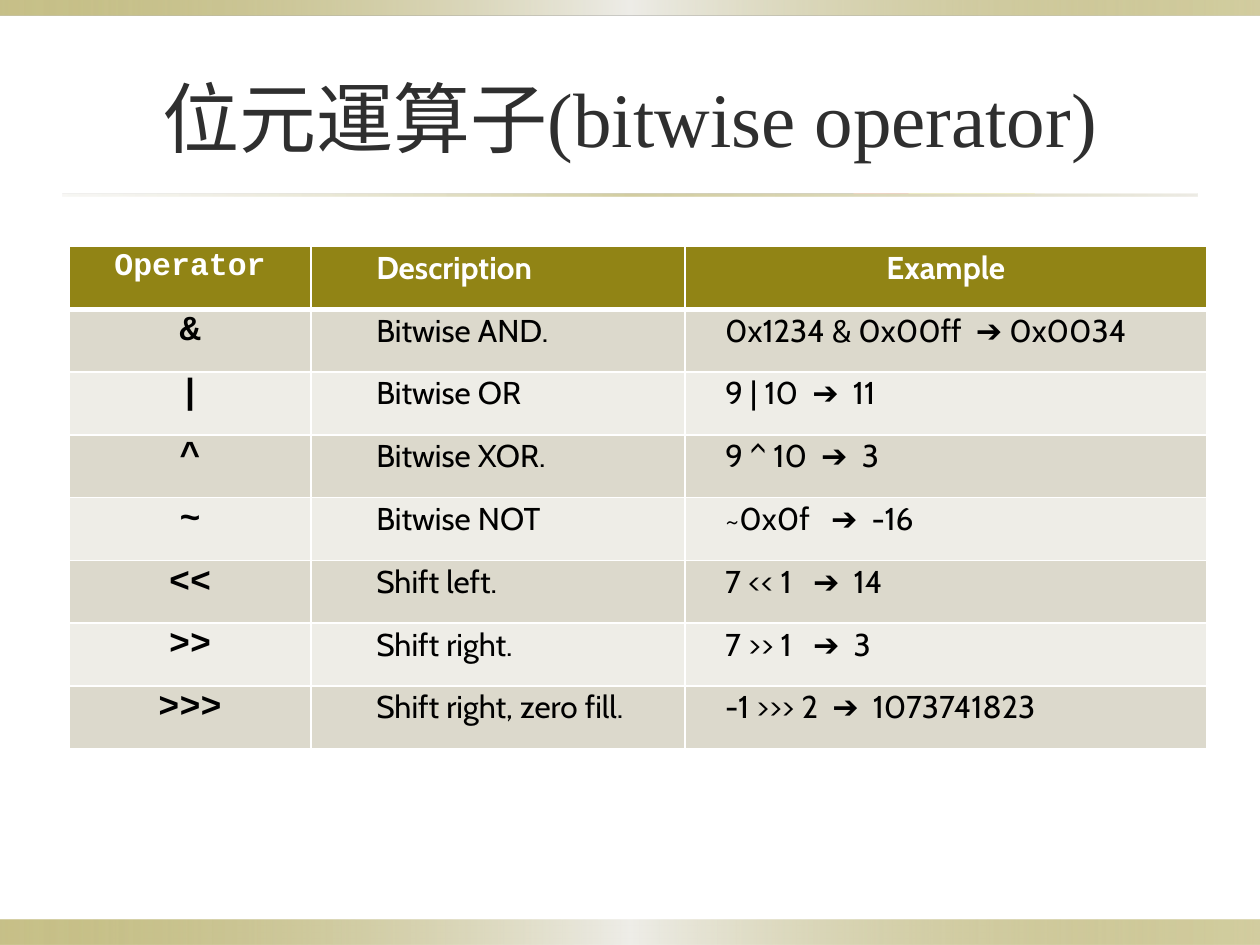
from lxml import etree
from pptx import Presentation
from pptx.dml.color import RGBColor
from pptx.enum import shapes, text
from pptx.oxml import ns
from pptx.util import Pt

COLORS = {"olive": "918415", "sand": "DCD9CC", "pale": "EEEDE7", "mist": "EEEDE8",
          "white": "FFFFFF", "black": "000000", "title": "2F2F2F"}

TITLE = "位元運算子(bitwise operator)"
HEADER = ("Operator", "Description", "Example")
OPERATORS = [
    ("&", "Bitwise AND.", "0x1234 & 0x00ff  ➔ 0x0034"),
    ("|", "Bitwise OR", "9 | 10  ➔  11"),
    ("^", "Bitwise XOR.", "9 ^ 10  ➔  3"),
    ("~", "Bitwise NOT", "~0x0f   ➔  -16"),
    ("<<", "Shift left.", "7 << 1   ➔  14"),
    (">>", "Shift right.", "7 >> 1   ➔  3"),
    (">>>", "Shift right, zero fill.", "-1 >>> 2  ➔  1073741823"),
]

# Gradient stops: position %, colour, opacity %
BAND = [(0, "olive", 50), (50, "mist", 100), (100, "olive", 40)]
RULE = [(0, "sand", 20), (50, "olive", 40), (100, "sand", 50)]
DECOR = [((0, 525.6, 720, 14.4), BAND),
         ((0, 0, 720, 8.64), BAND),
         ((36, 110.9, 648, 1.44), RULE)]

COL_WIDTHS = (138, 213.8, 298.2)
COL_FONTS = ("Courier New", "Cabin", "Cabin")
INDENTS = (0, 36, 21.6)
ROW_HEIGHT = 35.9
INSET = 1.44


def rgb(name):
    return RGBColor.from_string(COLORS[name])


def add_child(parent, tag, **attrs):
    return etree.SubElement(parent, ns.qn("a:" + tag), {k: str(v) for k, v in attrs.items()})


def add_color(parent, name, opacity=100):
    clr = add_child(parent, "srgbClr", val=COLORS[name])
    if opacity < 100:
        add_child(clr, "alpha", val=opacity * 1000)


def add_gradient_bar(s, box, stops):
    sp = s.shapes.add_shape(shapes.MSO_SHAPE.RECTANGLE, *map(Pt, box))
    sp.shadow.inherit = False
    sp.line.fill.background()
    sp.fill.gradient()
    sp.fill.gradient_angle = 0
    stop_list = sp.fill._fill._gradFill.find(ns.qn("a:gsLst"))
    for old in list(stop_list):
        stop_list.remove(old)
    for pos, color, opacity in stops:
        add_color(add_child(stop_list, "gs", pos=pos * 1000), color, opacity)


def add_borders(cell, top, bottom):
    tc_pr = cell._tc.get_or_add_tcPr()
    for side, width in (("L", 1), ("R", 1), ("T", top), ("B", bottom)):
        ln = add_child(tc_pr, "ln" + side, w=Pt(width))
        add_color(add_child(ln, "solidFill"), "white")


def fill_cell(cell, row, col, content):
    is_header = row == 0
    add_borders(cell, 3 if row == 1 else 1, 3 if is_header else 1)
    cell.fill.solid()
    cell.fill.fore_color.rgb = rgb("olive" if is_header else "sand" if row % 2 else "pale")
    cell.margin_left = cell.margin_right = cell.margin_top = cell.margin_bottom = Pt(INSET)
    p = cell.text_frame.paragraphs[0]
    p.text = content
    centered = col == 0 or (is_header and col == 2)
    p.alignment = text.PP_ALIGN.CENTER if centered else text.PP_ALIGN.LEFT
    if col:
        p.level = 1
        p_pr = p._p.get_or_add_pPr()
        p_pr.set("marL", str(Pt(0 if centered else INDENTS[col])))
        p_pr.set("indent", "0")
    p.font.name = COL_FONTS[col]
    p.font.size = Pt(20 if col == 0 and not is_header else 18)
    p.font.bold = is_header or col == 0
    p.font.color.rgb = rgb("white" if is_header else "black")


def main():
    prs = Presentation()
    prs.slide_width, prs.slide_height = Pt(720), Pt(540)
    s = prs.slides.add_slide(prs.slide_layouts[5])

    # Bands at top and bottom, rule under the title
    for box, stops in DECOR:
        add_gradient_bar(s, box, stops)

    # Title
    title = s.shapes.title
    title.left, title.top, title.width, title.height = map(Pt, (36, 21.6, 648, 90))
    tf = title.text_frame
    tf.text = TITLE
    tf.auto_size = text.MSO_AUTO_SIZE.NONE
    tf.vertical_anchor = text.MSO_ANCHOR.MIDDLE
    p = tf.paragraphs[0]
    p.alignment = text.PP_ALIGN.CENTER
    p.font.name, p.font.size = "Times New Roman", Pt(44)
    p.font.color.rgb = rgb("title")

    # Operator table
    rows = [HEADER] + OPERATORS
    table = s.shapes.add_table(len(rows), len(HEADER), Pt(39.6), Pt(140.8),
                               Pt(sum(COL_WIDTHS)), Pt(ROW_HEIGHT * len(rows))).table
    for column, width in zip(table.columns, COL_WIDTHS):
        column.width = Pt(width)
    for i, row in enumerate(rows):
        table.rows[i].height = Pt(ROW_HEIGHT)
        for j, content in enumerate(row):
            fill_cell(table.cell(i, j), i, j, content)

    prs.save("out.pptx")


if __name__ == "__main__":
    main()
